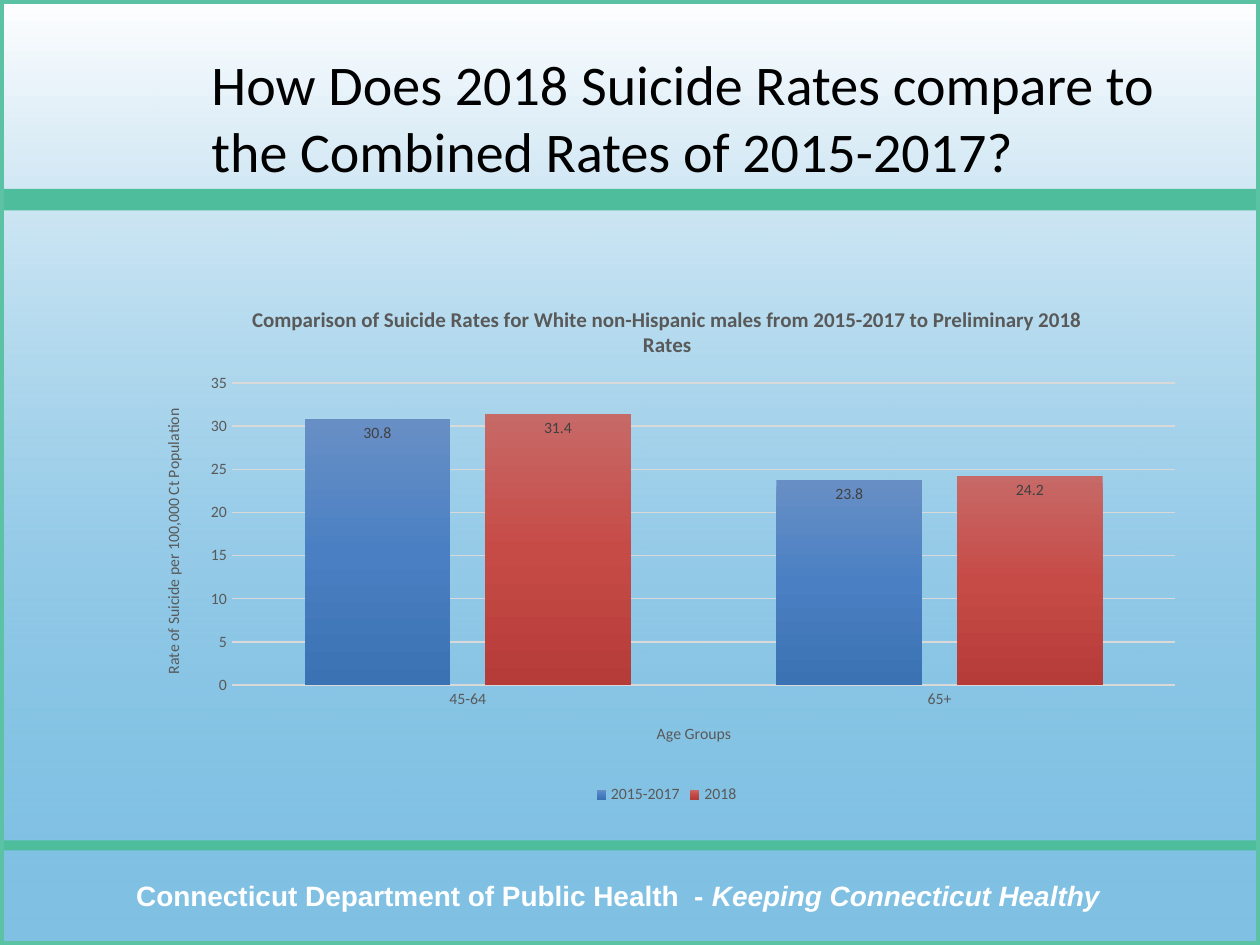
from lxml import etree
from pptx import Presentation
from pptx import util as u
from pptx.chart.data import CategoryChartData
from pptx.dml.color import RGBColor
from pptx.enum import chart as charts, shapes, text
from pptx.oxml import parse_xml
from pptx.oxml.ns import nsdecls, qn

COLORS = {
    "black": "000000", "white": "FFFFFF", "green": "4DBD9C", "frame": "5BC2A4",
    "sky": "0082C8", "gray": "595959", "label": "404040", "grid": "D9D9D9",
}
CHART_WIDTH, CHART_HEIGHT = 8.42, 4.17


def write(frame, *runs, size, color, font="Calibri", bold=False, align=None):
    """Fill the first paragraph with (text, italic) runs."""
    paragraph = frame.paragraphs[0]
    if align is not None:
        paragraph.alignment = align
    for words, italic in runs:
        run = paragraph.add_run()
        run.text = words
        run.font.size = u.Pt(size)
        run.font.name = font
        run.font.bold = bold
        run.font.italic = italic
        run.font.color.rgb = RGBColor.from_string(COLORS[color])


def set_gradient(fill, angle, stops):
    """Apply (position, hex, opacity) stops, all in percent; angle is counter-clockwise."""
    fill.gradient()
    fill.gradient_angle = angle
    stop_list = fill._xPr.find(qn("a:gradFill")).find(qn("a:gsLst"))
    for stop in list(stop_list):
        stop_list.remove(stop)
    for position, color, opacity in stops:
        stop = etree.SubElement(stop_list, qn("a:gs"), pos=str(position * 1000))
        tone = etree.SubElement(stop, qn("a:srgbClr"), val=color)
        if opacity < 100:
            etree.SubElement(tone, qn("a:alpha"), val=str(opacity * 1000))


presentation = Presentation()
presentation.slide_width = u.Inches(10)
presentation.slide_height = u.Inches(7.5)
slide = presentation.slides.add_slide(presentation.slide_layouts[6])

# Background and bands
panels = []
for top, height in [(0, 7.5), (6.67, 0.08), (1.5, 0.17), (0, 7.5)]:
    shape = slide.shapes.add_shape(shapes.MSO_SHAPE.RECTANGLE, u.Inches(0), u.Inches(top),
                                   u.Inches(10), u.Inches(height))
    shape.shadow.inherit = False
    shape.line.fill.background()
    panels.append(shape)
background, footer_band, title_band, frame = panels
set_gradient(background.fill, 90, [(0, COLORS["sky"], 50), (100, COLORS["white"], 100)])
for band in (footer_band, title_band):
    band.fill.solid()
    band.fill.fore_color.rgb = RGBColor.from_string(COLORS["green"])
frame.fill.background()
frame.line.color.rgb = RGBColor.from_string(COLORS["frame"])
frame.line.width = u.Pt(4.5)

# Title and footer
title = slide.shapes.add_textbox(u.Inches(1.58), u.Inches(0.3), u.Inches(7.92), u.Inches(1.25))
title.text_frame.word_wrap = True
title.text_frame.vertical_anchor = text.MSO_ANCHOR.MIDDLE
write(title.text_frame,
      ("How Does 2018 Suicide Rates compare to the Combined Rates of 2015-2017?", False),
      size=32, color="black")

footer = slide.shapes.add_textbox(u.Inches(0.49), u.Inches(6.92), u.Inches(8.83), u.Inches(0.37))
footer.text_frame.word_wrap = True
write(footer.text_frame,
      ("Connecticut Department of Public Health  - ", False),
      ("Keeping Connecticut Healthy", True),
      size=16, color="white", font="Arial", bold=True, align=text.PP_ALIGN.CENTER)

# Chart
data = CategoryChartData()
data.categories = ["45-64", "65+"]
data.add_series("2015-2017", [30.8, 23.8])
data.add_series("2018", [31.4, 24.2])
chart = slide.shapes.add_chart(charts.XL_CHART_TYPE.COLUMN_CLUSTERED, u.Inches(1.08),
                               u.Inches(2.25), u.Inches(CHART_WIDTH),
                               u.Inches(CHART_HEIGHT), data).chart
chart.font.size = u.Pt(10)
chart.font.name = "Calibri"
chart.has_title = True
chart.has_legend = True
chart.legend.position = charts.XL_LEGEND_POSITION.BOTTOM
chart.legend.include_in_layout = False

plot = chart.plots[0]
plot.gap_width = 100
plot.overlap = -24
plot.vary_by_categories = False
bar_colors = [("688FC5", "4A80C3", "3B72B3"), ("C76967", "C64B47", "B63C39")]
small_fonts = []
for series, tones in zip(plot.series, bar_colors):
    set_gradient(series.format.fill, 270,
                 [(position, tone, 100) for position, tone in zip((0, 50, 100), tones)])
    labels = series.data_labels
    labels.show_value = True
    labels.position = charts.XL_LABEL_POSITION.INSIDE_END
    small_fonts.append((labels.font, "label"))

category_axis, value_axis = chart.category_axis, chart.value_axis
for axis in (category_axis, value_axis):
    axis.major_tick_mark = charts.XL_TICK_MARK.NONE
    axis.minor_tick_mark = charts.XL_TICK_MARK.NONE
    small_fonts.append((axis.tick_labels.font, "gray"))
small_fonts.append((chart.legend.font, "gray"))
for font, color in small_fonts:
    font.size = u.Pt(9)
    font.name = "Calibri"
    font.color.rgb = RGBColor.from_string(COLORS[color])

value_axis.minimum_scale = 0
value_axis.maximum_scale = 35
value_axis.major_unit = 5
value_axis.format.line.fill.background()
value_axis.has_major_gridlines = True
for line, width in [(category_axis.format.line, 1),
                    (value_axis.major_gridlines.format.line, 0.75)]:
    line.color.rgb = RGBColor.from_string(COLORS["grid"])
    line.width = u.Pt(width)

heading = "Comparison of Suicide Rates for White non-Hispanic males from 2015-2017 to Preliminary 2018 Rates"
for caption, words, size, bold in [
        (chart.chart_title, heading, 12, True),
        (category_axis.axis_title, "Age Groups", 9, False),
        (value_axis.axis_title, "Rate of Suicide per 100,000 Ct Population", 9, False)]:
    write(caption.text_frame, (words, False), size=size, color="gray", bold=bold)

# Fixed places inside the chart, in inches from its top left corner
plot_area = chart._chartSpace.chart.plotArea
for element, index, place in [
        (plot_area, 0, {"x": 0.76, "y": 0.79, "w": 7.49, "h": 2.4}),
        (chart.chart_title._element, 1, {"x": 0.89, "y": 0.14}),
        (category_axis.axis_title._element, 1, {"x": 4.11, "y": 3.47}),
        (value_axis.axis_title._element, 1, {"x": 0.19, "y": 0.97})]:
    for layout in element.findall(qn("c:layout")):
        element.remove(layout)
    target = '<c:layoutTarget val="inner"/>' if "w" in place else ""
    modes = "".join(f'<c:{key}Mode val="edge"/>' for key in "xy")
    values = "".join(
        f'<c:{key} val="{length / (CHART_WIDTH if key in "xw" else CHART_HEIGHT):.4f}"/>'
        for key, length in place.items())
    element.insert(index, parse_xml(
        f'<c:layout {nsdecls("c")}><c:manualLayout>{target}{modes}{values}'
        '</c:manualLayout></c:layout>'))

presentation.save("out.pptx")
